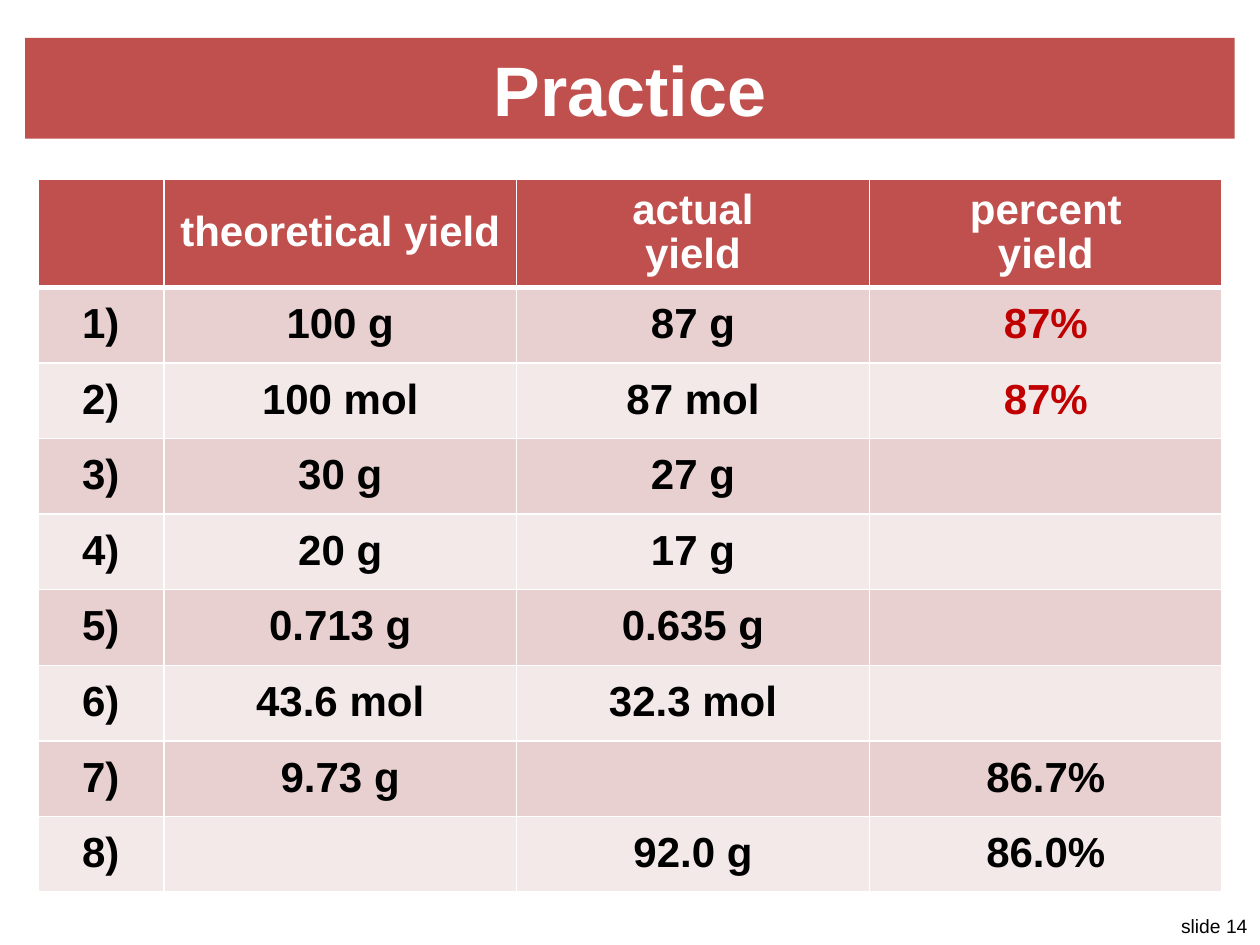
from lxml.etree import SubElement
from pptx import Presentation
from pptx.dml.color import RGBColor
from pptx.enum.shapes import MSO_SHAPE as Shape
from pptx.enum.text import MSO_ANCHOR as Anchor, PP_ALIGN as Align
from pptx.oxml.ns import qn
from pptx.util import Emu, Pt

PX = 9144  # 100 px to the inch
COLORS = {"white": "FFFFFF", "black": "000000", "red": "C0504D",
          "answer": "C00000", "band_dark": "E8D0D0", "band_light": "F4E9E9"}
FONT = "Arial"

TITLE = "Practice"
FOOTER = "slide 14"
HEADERS = ["", "theoretical yield", "actual\nyield", "percent\nyield"]
PROBLEMS = [
    ("100 g", "87 g", "87%"),
    ("100 mol", "87 mol", "87%"),
    ("30 g", "27 g", ""),
    ("20 g", "17 g", ""),
    ("0.713 g", "0.635 g", ""),
    ("43.6 mol", "32.3 mol", ""),
    ("9.73 g", "", "86.7%"),
    ("", "92.0 g", "86.0%"),
]
WORKED_EXAMPLES = 2
COLUMN_WIDTHS = [100, 280, 280, 280]
HEADER_HEIGHT, ROW_HEIGHT = 83, 60


def px(*lengths):
    return [Emu(length * PX) for length in lengths]


def rgb(name):
    return RGBColor.from_string(COLORS[name])


def write(frame, text, size, color, bold=True, align=Align.CENTER, spacing=None):
    """Put each line of text in its own paragraph."""
    for index, line in enumerate(text.split("\n")):
        para = frame.add_paragraph() if index else frame.paragraphs[0]
        para.alignment = align
        if spacing:
            para.line_spacing = spacing
        span = para.add_run()
        span.text = line
        span.font.name, span.font.size, span.font.bold = FONT, Pt(size), bold
        span.font.color.rgb = rgb(color)


def fill_cell(cell, text, fill, color, bottom_width=1):
    cell.vertical_anchor = Anchor.MIDDLE
    if text:
        write(cell.text_frame, text, 24, color, spacing=0.95)
    properties = cell._tc.get_or_add_tcPr()
    for side, width in (("L", 1), ("R", 1), ("T", 1), ("B", bottom_width)):
        line = SubElement(properties, qn(f"a:ln{side}"), w=str(Pt(width)))
        solid = SubElement(line, qn("a:solidFill"))
        SubElement(solid, qn("a:srgbClr"), val=COLORS["white"])
    cell.fill.solid()
    cell.fill.fore_color.rgb = rgb(fill)


def add_title(page):
    banner = page.shapes.add_shape(Shape.RECTANGLE, *px(20, 30, 960, 80))
    banner.shadow.inherit = False
    banner.fill.solid()
    banner.fill.fore_color.rgb = rgb("red")
    banner.line.fill.background()
    banner.text_frame.vertical_anchor = Anchor.MIDDLE
    write(banner.text_frame, TITLE, 40, "white")


def add_yield_table(page):
    height = HEADER_HEIGHT + ROW_HEIGHT * len(PROBLEMS)
    table = page.shapes.add_table(len(PROBLEMS) + 1, len(HEADERS),
                                  *px(30, 142, sum(COLUMN_WIDTHS), height)).table
    for column, width in zip(table.columns, px(*COLUMN_WIDTHS)):
        column.width = width
    table.rows[0].height = Emu(HEADER_HEIGHT * PX)
    for column, text in enumerate(HEADERS):
        fill_cell(table.cell(0, column), text, "red", "white", bottom_width=3)
    for number, values in enumerate(PROBLEMS, 1):
        table.rows[number].height = Emu(ROW_HEIGHT * PX)
        band = "band_dark" if number % 2 else "band_light"
        for column, text in enumerate((f"{number})", *values)):
            is_answer = number <= WORKED_EXAMPLES and column == len(HEADERS) - 1
            fill_cell(table.cell(number, column), text, band,
                      "answer" if is_answer else "black")


def add_footer(page):
    box = page.shapes.add_textbox(*px(925, 721, 75, 29))
    box.text_frame.word_wrap = False
    write(box.text_frame, FOOTER, 11, "black", bold=False, align=Align.RIGHT)


def main():
    deck = Presentation()
    deck.slide_width, deck.slide_height = px(1000, 750)
    page = deck.slides.add_slide(deck.slide_layouts[6])
    add_footer(page)
    add_title(page)
    add_yield_table(page)
    deck.save("out.pptx")


if __name__ == "__main__":
    main()
